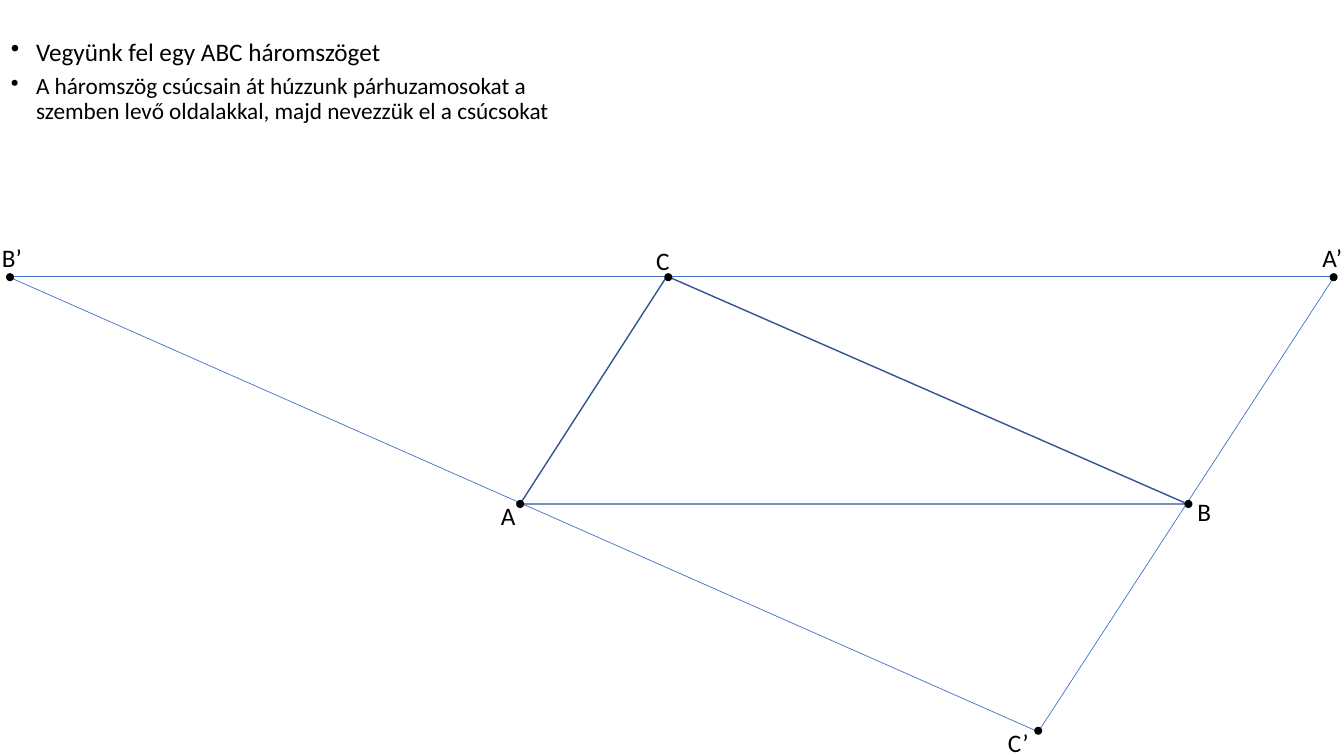
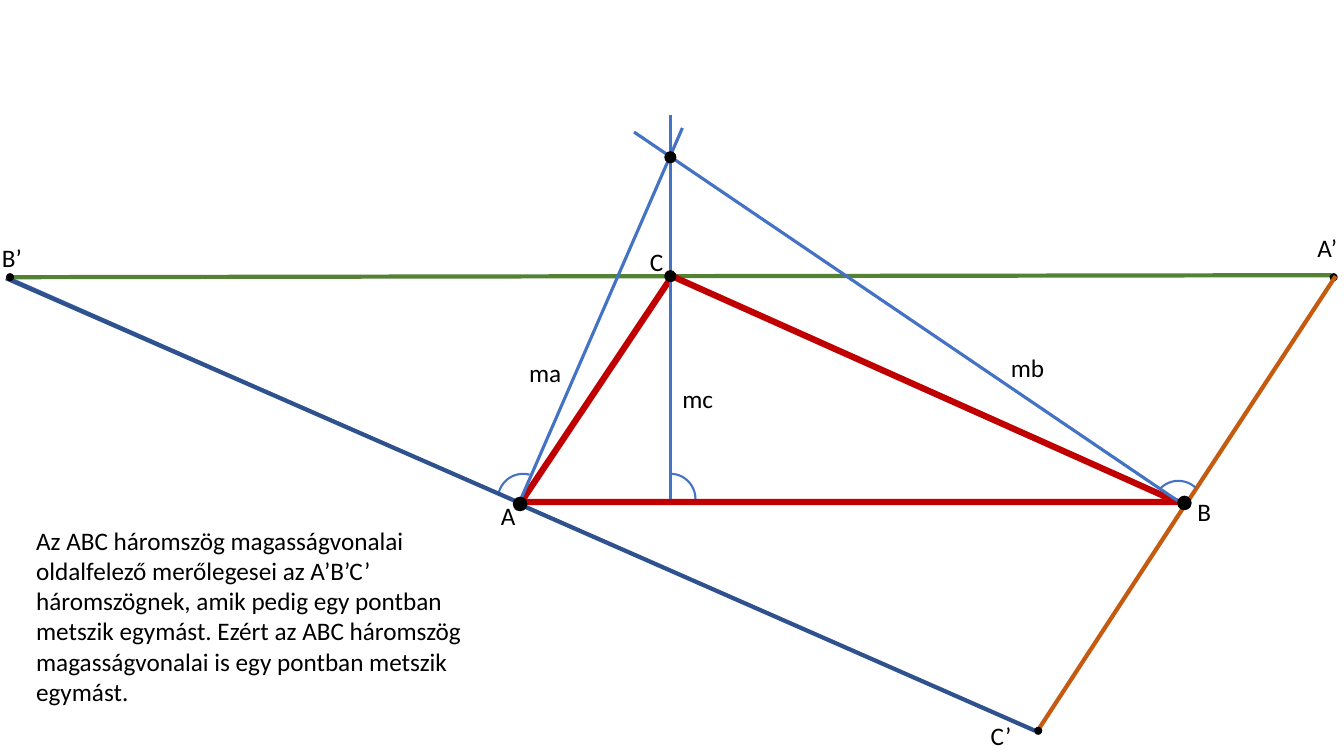
from lxml import etree
from pptx import Presentation
from pptx.dml.color import RGBColor
from pptx.enum.shapes import MSO_CONNECTOR, MSO_SHAPE
from pptx.oxml.ns import qn
from pptx.util import Inches, Pt

STRAIGHT = MSO_CONNECTOR.STRAIGHT
TRIANGLE = MSO_SHAPE.ISOSCELES_TRIANGLE
OVAL = MSO_SHAPE.OVAL
ARC = MSO_SHAPE.ARC

BLACK = RGBColor(0x00, 0x00, 0x00)
BLUE = RGBColor(0x44, 0x72, 0xC4)
DARK_BLUE = RGBColor(0x2F, 0x52, 0x8F)
OUTLINE_BLUE = RGBColor(0x32, 0x54, 0x91)
GREEN = RGBColor(0x54, 0x82, 0x35)
ORANGE = RGBColor(0xC5, 0x5A, 0x11)
RED = RGBColor(0xC0, 0x00, 0x00)

# Grid: ten columns and ten rows to the inch
COLUMNS, ROWS = 133.33, 75
CELL = Inches(0.1)
LABEL_WIDTH, LABEL_HEIGHT = 4.4, 4

# Places shared by both slides, as (column, row)
OUTER_POINTS = [(132.3, 27.5), (1, 27.5), (103, 72.5)]
SHARED_LABELS = [("A", 48.7, 49.1), ("B", 117.8, 48.7), ("B’", -0.8, 23.5)]


class Drawing:
    """Holds the style and the slide being drawn."""

    font_name = "Calibri"
    font_size = 18

    def __init__(self):
        self.presentation = Presentation()
        self.presentation.slide_width = self.cells(COLUMNS)
        self.presentation.slide_height = self.cells(ROWS)
        self.slide = None

    @staticmethod
    def cells(count):
        return round(count * CELL)

    def new_slide(self):
        blank = self.presentation.slide_layouts[6]
        self.slide = self.presentation.slides.add_slide(blank)

    def line(self, start, end, color, width):
        ends = [self.cells(value) for value in (*start, *end)]
        connector = self.slide.shapes.add_connector(STRAIGHT, *ends)
        connector.line.color.rgb = color
        connector.line.width = Pt(width)
        etree.SubElement(connector._element.spPr, qn("a:effectLst"))

    def shape(self, kind, left, top, width, height):
        box = [self.cells(value) for value in (left, top, width, height)]
        shape = self.slide.shapes.add_shape(kind, *box)
        shape.shadow.inherit = False
        return shape

    def outline(self, kind, box, color, width):
        shape = self.shape(kind, *box)
        shape.fill.background()
        shape.line.color.rgb = color
        shape.line.width = Pt(width)
        return shape

    def triangle(self, box, apex, color, width):
        self.outline(TRIANGLE, box, color, width).adjustments[0] = apex

    def angle(self, center, rotation=0, size=5):
        column, row = center
        box = (column - size / 2, row - size / 2, size, size)
        self.outline(ARC, box, BLUE, 1.5).rotation = rotation

    def dot(self, center, size=0.8):
        column, row = center
        shape = self.shape(OVAL, column - size / 2, row - size / 2, size, size)
        shape.fill.solid()
        shape.fill.fore_color.rgb = BLACK
        shape.line.fill.background()

    def text(self, words, left, top, width=LABEL_WIDTH, height=LABEL_HEIGHT,
             size=font_size):
        box = [self.cells(value) for value in (left, top, width, height)]
        frame = self.slide.shapes.add_textbox(*box).text_frame
        frame.word_wrap = True
        paragraph = frame.paragraphs[0]
        paragraph.text = words
        paragraph.font.name = self.font_name
        paragraph.font.size = Pt(size)
        paragraph.font.color.rgb = BLACK
        return paragraph

    def bullet(self, *arguments):
        paragraph = self.text(*arguments)
        paragraph.line_spacing = 0.9
        properties = paragraph._p.get_or_add_pPr()
        properties.set("marL", str(Inches(0.25)))
        properties.set("indent", str(-Inches(0.25)))
        mark = etree.Element(qn("a:buChar"), char="•")
        properties.find(qn("a:lnSpc")).addnext(mark)

    def labels(self, entries):
        for entry in SHARED_LABELS + entries:
            self.text(*entry)

    def dots(self, centers, size=0.8):
        for center in centers:
            self.dot(center, size)

    def lines(self, entries):
        for entry in entries:
            self.line(*entry)


def construction_slide(drawing):
    drawing.new_slide()
    # Parallels through the vertices
    corners = [(132.4, 27.4), (103, 72.6), (0.7, 27.4)]
    for index, corner in enumerate(corners):
        drawing.line(corner, corners[index - 1], BLUE, 0.5)
    # Inner triangle and points
    drawing.triangle((51.6, 27.4, 66.2, 22.6), 0.22, OUTLINE_BLUE, 1)
    drawing.dots([(51.6, 50), (117.9, 50), (66.3, 27.5)] + OUTER_POINTS)
    drawing.labels([("C", 64.1, 23.8), ("A’", 130.2, 23.5), ("C’", 99, 71.7)])
    # Steps
    drawing.bullet("Vegyünk fel egy ABC háromszöget", 0.1, 3.4, 40.7, 3.9)
    drawing.bullet("A háromszög csúcsain át húzzunk párhuzamosokat a szemben "
                   "levő oldalakkal, majd nevezzük el a csúcsokat",
                   0.1, 6.9, 57.4, 7, 16.6)


def altitudes_slide(drawing):
    drawing.new_slide()
    # Right angles and inner triangle
    drawing.line((66.5, 27.4), (132.1, 27.3), GREEN, 3)
    drawing.angle((66.5, 49.5))
    drawing.angle((51.9, 49.5), 285)
    drawing.triangle((51.7, 27.4, 65.1, 22.4), 0.23, RED, 4.5)
    # Sides of the outer triangle
    drawing.lines([
        ((51.7, 49.9), (0.9, 27.5), BLUE, 1),
        ((103, 72.6), (0.7, 27.5), DARK_BLUE, 1),
        ((0.7, 27.5), (66.2, 27.4), GREEN, 3),
        ((51.8, 50), (0.6, 27.6), DARK_BLUE, 3),
        ((102.7, 72.5), (51.7, 50.1), DARK_BLUE, 3),
        ((103, 72.4), (117.7, 49.9), ORANGE, 3),
    ])
    drawing.dots(OUTER_POINTS)
    # Altitudes
    drawing.lines([
        ((67.7, 12.7), (51.2, 50.6), BLUE, 2.25),
        ((62.9, 13.1), (117.3, 50), BLUE, 2.25),
        ((66.5, 11.4), (66.5, 49.5), BLUE, 2.25),
        ((117.8, 49.8), (132.5, 27.4), ORANGE, 3),
    ])
    drawing.angle((116.9, 50.2), 315)
    drawing.dots([(66.5, 27.4), (66.5, 15.6)], 1.2)
    drawing.dots([(51.6, 50), (117.5, 49.9)], 1.45)
    # Labels and conclusion
    drawing.labels([
        ("C", 63.5, 23.9), ("A’", 129.7, 22.6), ("C’", 97.3, 71),
        ("mc", 66.7, 37.5, 6.8), ("ma", 51.5, 35, 6.8), ("mb", 99.3, 34.5, 6.8),
    ])
    drawing.text("Az ABC háromszög magasságvonalai oldalfelező merőlegesei az "
                 "A’B’C’ háromszögnek, amik pedig egy pontban metszik egymást. "
                 "Ezért az ABC háromszög magasságvonalai is egy pontban "
                 "metszik egymást.", 2.6, 51.6, 48.5, 19.2)


def main():
    drawing = Drawing()
    construction_slide(drawing)
    altitudes_slide(drawing)
    drawing.presentation.save("out.pptx")


if __name__ == "__main__":
    main()
